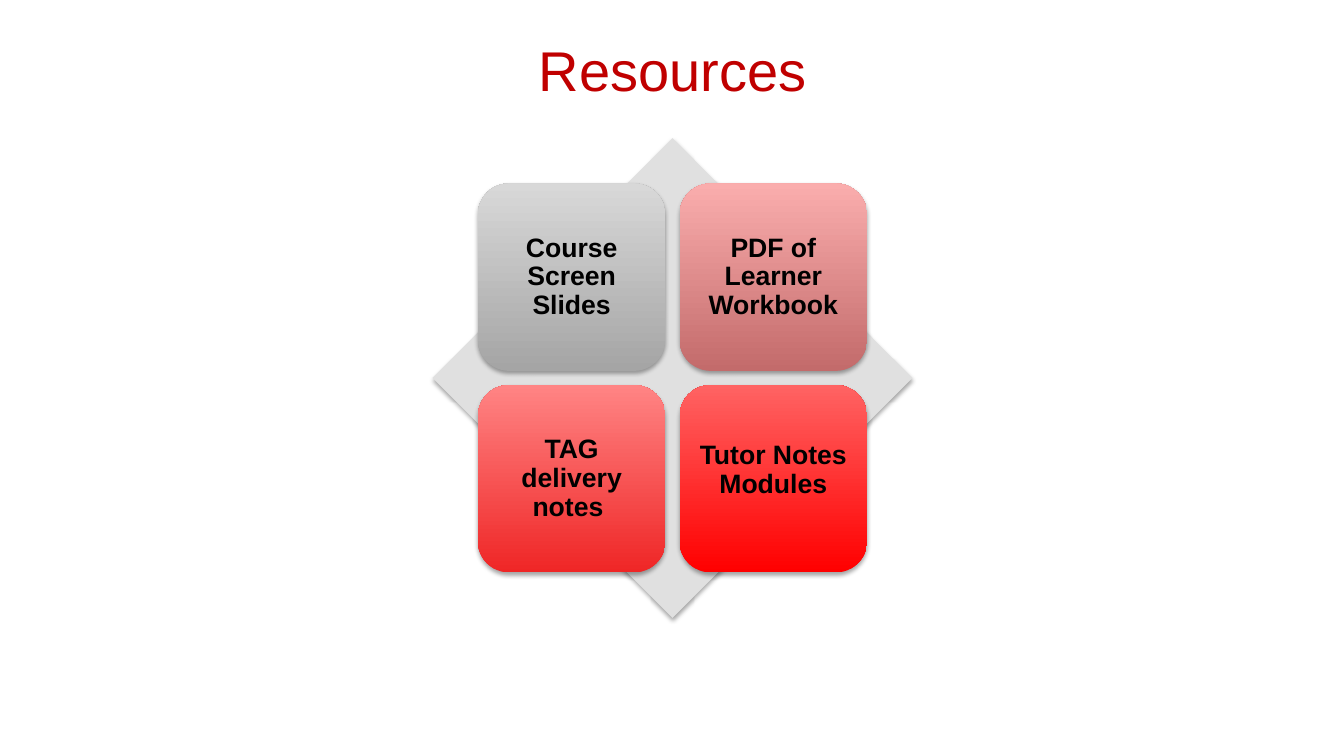
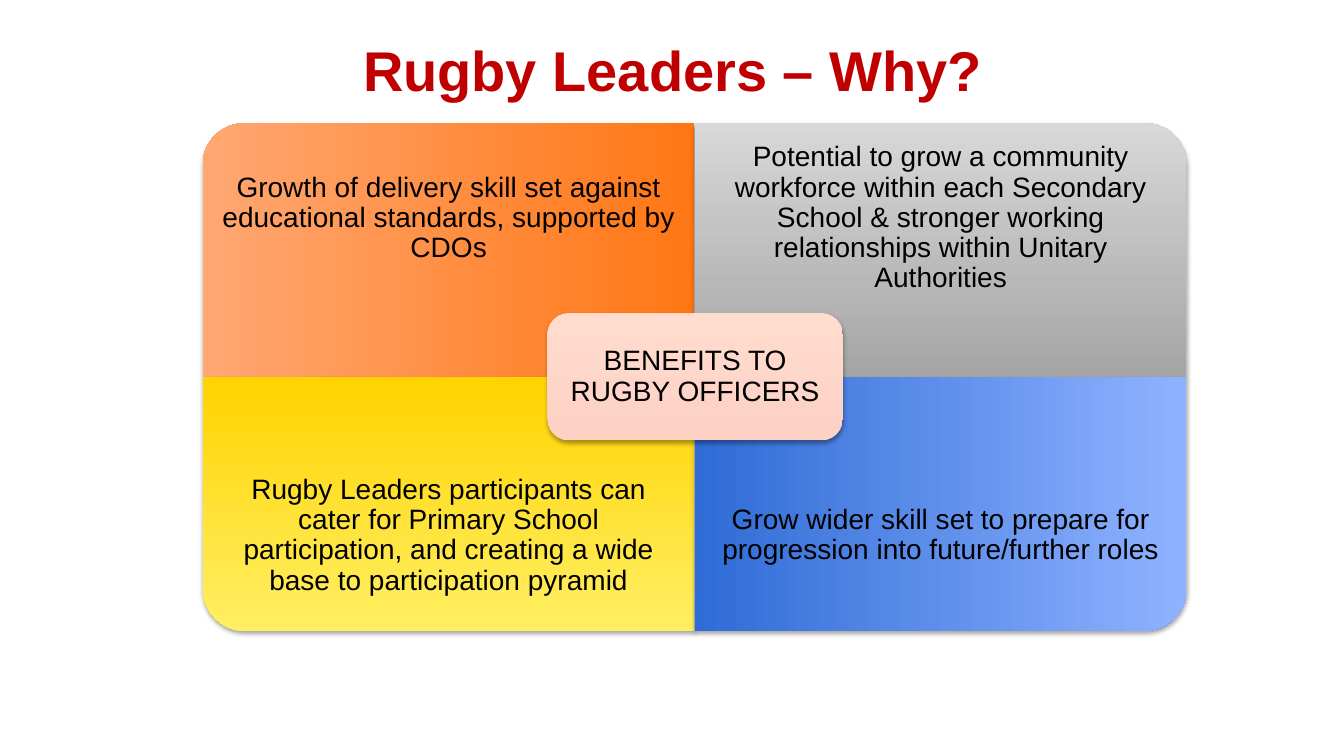
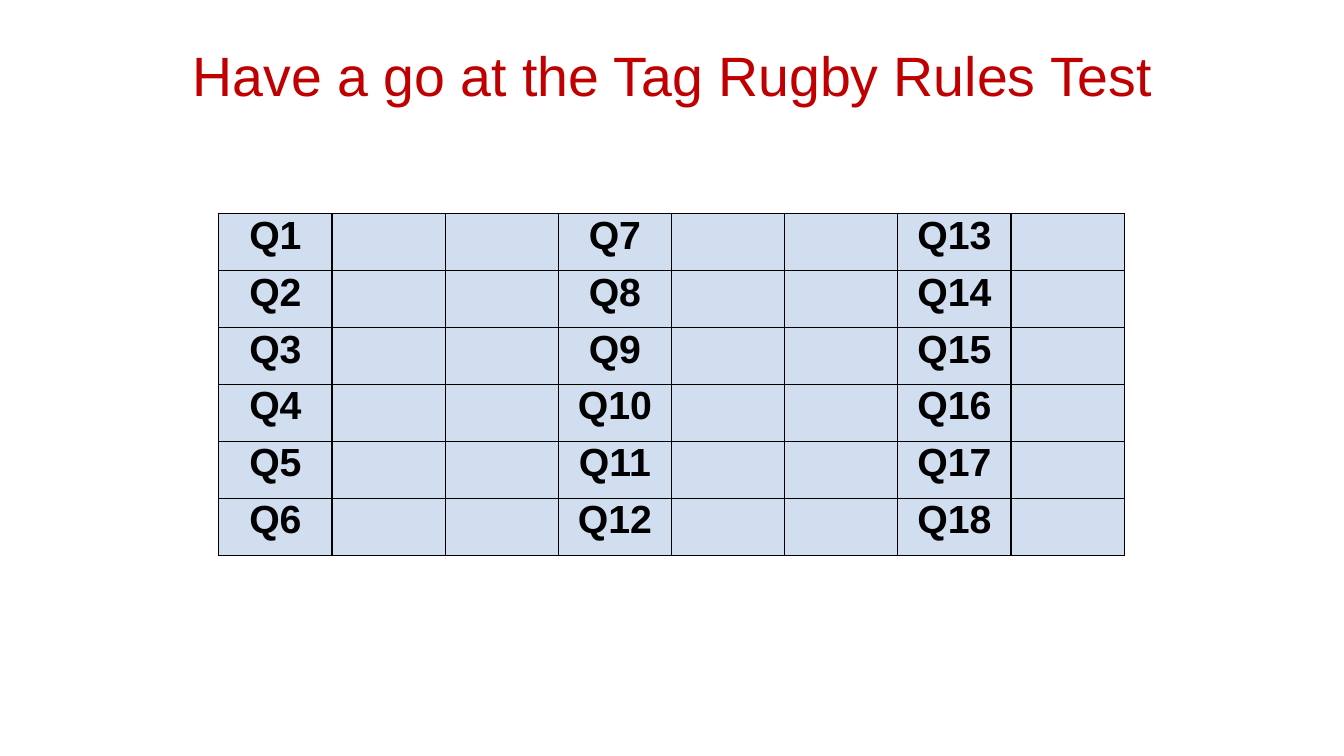
from lxml import etree
from pptx import Presentation
from pptx import util as u
from pptx.dml.color import RGBColor
from pptx.enum import shapes, text
from pptx.oxml.ns import qn

COLORS = {
    "title": "C00000",
    "ink": "000000",
    "diamond": "E0E0E0",
    "cell": "D0DEEF",
    "gray": "A5A5A5", "gray_light": "D8D8D8",
    "rose": "C36B6B", "rose_light": "FAADAD",
    "coral": "EF2626", "coral_light": "FF8484",
    "red": "FF0000", "red_light": "FF6363",
    "orange": "FF7714", "orange_light": "FFA773",
    "yellow": "FFD300", "yellow_light": "FFEF63",
    "blue": "2F6CD6", "blue_light": "8FB2FF",
    "peach": "FDD1C4", "peach_light": "FFDCCE",
}
FORM = shapes.MSO_SHAPE
MIDDLE = text.MSO_ANCHOR.MIDDLE


def px(*lengths):
    return [u.Emu(length * 9144) for length in lengths]


def rgb(name):
    return RGBColor.from_string(COLORS[name])


class Deck:
    """Holds the shared style and draws on the current slide."""

    font = "Arial"

    def __init__(self):
        self.show = Presentation()
        self.show.slide_width, self.show.slide_height = px(1333, 750)
        self.slide = None

    def new_slide(self, title, size=40, bold=False, inset=5):
        self.slide = self.show.slides.add_slide(self.show.slide_layouts[6])
        self.label((92, 38, 1150, 72), title, size, "title", bold, inset, text.MSO_ANCHOR.TOP)

    def style(self, paragraph, size, color="ink", bold=False):
        paragraph.alignment = text.PP_ALIGN.CENTER
        paragraph.font.name = self.font
        paragraph.font.size = u.Pt(size)
        paragraph.font.bold = bold
        paragraph.font.color.rgb = rgb(color)

    def caption(self, frame, words, size, color="ink", bold=False, inset=8, anchor=MIDDLE, lift=0):
        frame.word_wrap = True
        frame.vertical_anchor = anchor
        frame.margin_left, frame.margin_top, frame.margin_right = px(inset, inset, inset)
        frame.margin_bottom, = px(inset + 2 * lift)
        paragraph = frame.paragraphs[0]
        paragraph.text = words
        paragraph.line_spacing = 0.9
        self.style(paragraph, size, color, bold)

    def label(self, box, words, size, color="ink", bold=False, inset=16, anchor=MIDDLE):
        frame = self.slide.shapes.add_textbox(*px(*box)).text_frame
        self.caption(frame, words, size, color, bold, inset, anchor)

    def panel(self, form, box, color, gradient=True, turn=0):
        left, top, width, height = box
        if turn % 180:
            left, top = left + (width - height) // 2, top + (height - width) // 2
            width, height = height, width
        panel = self.slide.shapes.add_shape(form, *px(left, top, width, height))
        panel.rotation = turn
        panel.line.fill.background()
        if gradient:
            panel.fill.gradient()
            panel.fill.gradient_angle = 90
            for stop, name in zip(panel.fill.gradient_stops, (color, color + "_light")):
                stop.color.rgb = rgb(name)
        else:
            panel.fill.solid()
            panel.fill.fore_color.rgb = rgb(color)
        self.drop_shadow(panel)
        return panel

    def drop_shadow(self, panel):
        panel.shadow.inherit = False
        effects = panel._element.spPr.find(qn("a:effectLst"))
        shadow = etree.SubElement(effects, qn("a:outerShdw"), blurRad="40000", dist="23000",
                                  dir="5400000", rotWithShape="0")
        tint = etree.SubElement(shadow, qn("a:srgbClr"), val=COLORS["ink"])
        etree.SubElement(tint, qn("a:alpha"), val="35000")

    def border(self, cell):
        properties = cell._tc.get_or_add_tcPr()
        for side in ("lnL", "lnR", "lnT", "lnB"):
            edge = etree.SubElement(properties, qn("a:" + side), w="12700")
            fill = etree.SubElement(edge, qn("a:solidFill"))
            etree.SubElement(fill, qn("a:srgbClr"), val=COLORS["ink"])

    def answer_grid(self, box, rows, columns, block):
        grid = self.slide.shapes.add_table(rows, columns, *px(*box)).table
        grid.first_row = grid.horz_banding = False
        for row in range(rows):
            for column in range(columns):
                cell = grid.cell(row, column)
                self.border(cell)
                cell.fill.solid()
                cell.fill.fore_color.rgb = rgb("cell")
                if column % block == 0:
                    cell.margin_left = cell.margin_right = 0
                    cell.margin_top = cell.margin_bottom = 0
                    question = cell.text_frame.paragraphs[0]
                    question.text = f"Q{column // block * rows + row + 1}"
                    self.style(question, 28, bold=True)


def resources(deck):
    deck.new_slide("Resources")
    deck.panel(FORM.DIAMOND, (429, 137, 476, 476), "diamond", gradient=False)
    tiles = [
        ("Course Screen Slides", "gray", 0),
        ("PDF of Learner Workbook", "rose", 0),
        ("TAG delivery notes ", "coral", 0),
        ("Tutor Notes Modules", "red", 8),
    ]
    for index, (words, color, lift) in enumerate(tiles):
        row, column = divmod(index, 2)
        tile = deck.panel(FORM.ROUNDED_RECTANGLE,
                          (474 + 200 * column, 182 + 200 * row, 186, 186), color)
        deck.caption(tile.text_frame, words, 19, bold=True, lift=lift)


def benefits(deck):
    deck.new_slide("Rugby Leaders – Why?", bold=True)
    width, height = 488, 252
    quadrants = [
        ("Growth of delivery skill set against educational standards, supported by CDOs",
         "orange", 270),
        ("Potential to grow a community workforce within each Secondary School & stronger "
         "working relationships within Unitary Authorities", "gray", 0),
        ("Rugby Leaders participants can cater for Primary School participation, and creating "
         "a wide base to participation pyramid", "yellow", 180),
        ("Grow wider skill set to prepare for progression into future/further roles",
         "blue", 90),
    ]
    for index, (words, color, turn) in enumerate(quadrants):
        row, column = divmod(index, 2)
        left, top = 201 + width * column, 122 + height * row
        deck.panel(FORM.ROUND_1_RECTANGLE, (left, top, width, height), color, turn=turn)
        deck.label((left, top + row * height // 4, width, height * 3 // 4), words, 20)
    hub = deck.panel(FORM.ROUNDED_RECTANGLE, (543, 311, 293, 126), "peach")
    deck.caption(hub.text_frame, "BENEFITS TO RUGBY OFFICERS", 20)


def rules_test(deck):
    deck.new_slide("Have a go at the Tag Rugby Rules Test", size=39.6, inset=10)
    deck.answer_grid((217, 212, 898, 339), rows=6, columns=8, block=3)


def main():
    deck = Deck()
    for build in (resources, benefits, rules_test):
        build(deck)
    deck.show.save("out.pptx")


if __name__ == "__main__":
    main()
